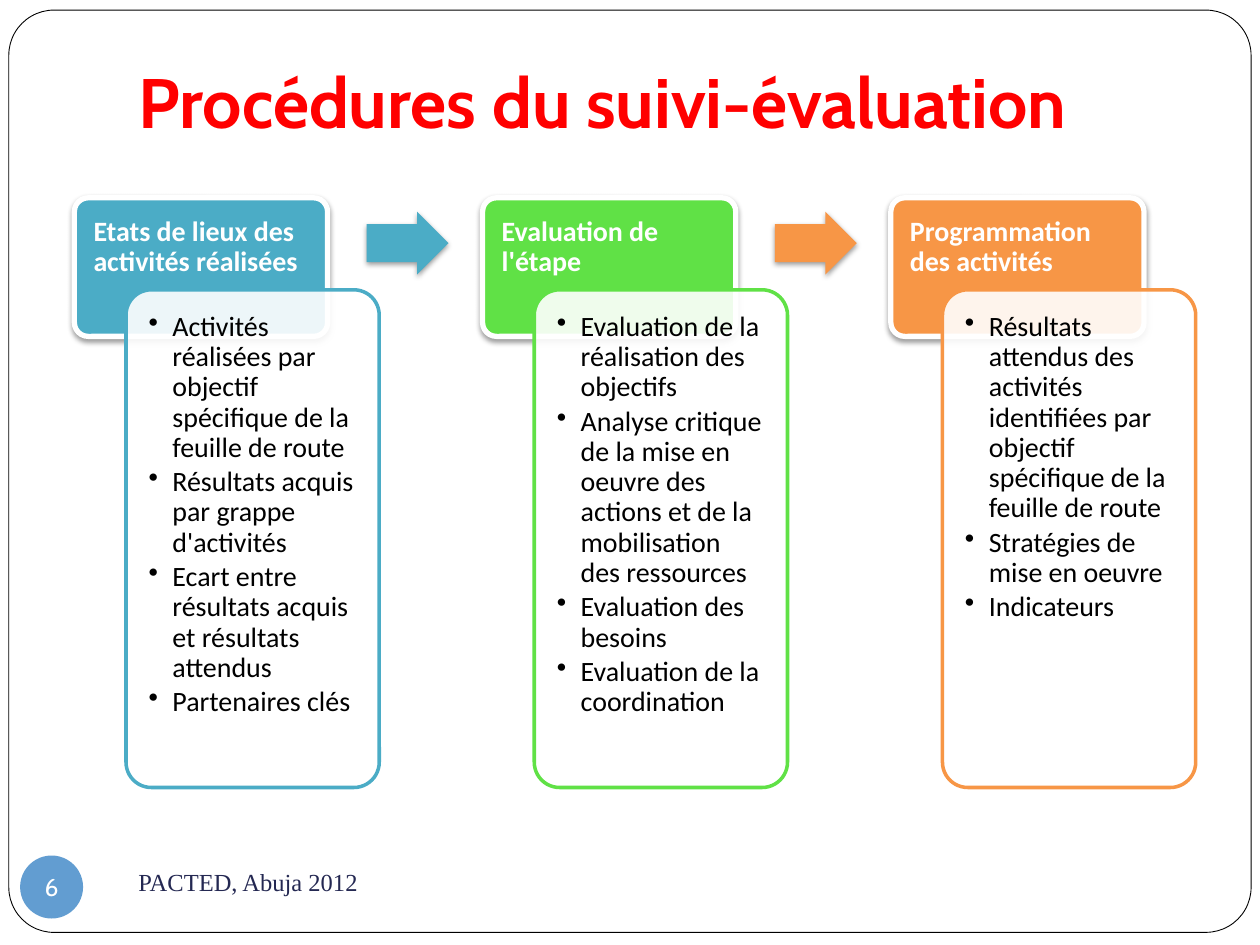
from lxml import etree
from pptx import Presentation, util as u
from pptx.dml.color import RGBColor
from pptx.enum import shapes, text
from pptx.oxml import ns

# Content
TITLE = "Procédures du suivi-évaluation"
FOOTER = "PACTED, Abuja 2012"
PAGE_NUMBER = "6"
STEPS = [
    {"heading": "Etats de lieux des activités réalisées",
     "color": "4BACC6", "arrow": "4BACC6",
     "points": ["Activités réalisées par objectif spécifique de la feuille de route",
                "Résultats acquis par grappe d'activités",
                "Ecart entre résultats acquis et résultats attendus",
                "Partenaires clés"]},
    {"heading": "Evaluation de l'étape",
     "color": "60E146", "arrow": "F79646",
     "points": ["Evaluation de la réalisation des objectifs",
                "Analyse critique de la mise en oeuvre des actions et de la "
                "mobilisation des ressources",
                "Evaluation des besoins",
                "Evaluation de la coordination"]},
    {"heading": "Programmation des activités",
     "color": "F79646", "arrow": None,
     "points": ["Résultats attendus des activités identifiées par objectif "
                "spécifique de la feuille de route",
                "Stratégies de mise en oeuvre",
                "Indicateurs"]},
]

# Theme: type styles and colours
THEME = {
    "title": {"name": "Cabin", "size": 40, "color": "FF0000", "bold": True},
    "footer": {"name": "Times New Roman", "size": 14, "color": "242852"},
    "number": {"name": "Cabin", "size": 14, "color": "FFFFFF"},
    "heading": {"name": "Calibri", "size": 16, "color": "FFFFFF", "bold": True},
    "point": {"name": "Calibri", "size": 16, "color": "000000"},
    "paper": "FFFFFF", "frame": "000000", "badge": "629DD1", "shadow": "000000",
}

# Layout in inches
STEP_LEFT, STEP_PITCH, STEP_WIDTH = 0.59, 3.24, 2.01
HEADER_TOP, HEADER_HEIGHT = 1.57, 1.1
CARD_OFFSET, CARD_TOP, CARD_HEIGHT = 0.41, 2.3, 3.95
ARROW_OFFSET, ARROW_TOP, ARROW_WIDTH, ARROW_HEIGHT = 2.32, 1.68, 0.65, 0.5
INSET, HANG = 0.12, 0.19

SHAPE = shapes.MSO_SHAPE
ANCHOR = text.MSO_ANCHOR


def add_shadow(shape):
    effects = shape._element.spPr.find(ns.qn("a:effectLst"))
    outer = etree.SubElement(effects, ns.qn("a:outerShdw"), blurRad=str(u.Pt(3.1)),
                             dist=str(u.Pt(1.6)), dir="5400000", rotWithShape="0")
    color = etree.SubElement(outer, ns.qn("a:srgbClr"), val=THEME["shadow"])
    etree.SubElement(color, ns.qn("a:alpha"), val="38000")


def add_shape(page, kind, at, fill, line=None, adjust=(), shadow=False, opacity=None):
    shape = page.shapes.add_shape(kind, *map(u.Inches, at))
    shape.shadow.inherit = False
    for index, value in enumerate(adjust):
        shape.adjustments[index] = value
    shape.fill.solid()
    shape.fill.fore_color.rgb = RGBColor.from_string(fill)
    if opacity:
        color = shape._element.spPr.find(ns.qn("a:solidFill"))[0]
        etree.SubElement(color, ns.qn("a:alpha"), val=str(opacity * 1000))
    if line:
        shape.line.color.rgb = RGBColor.from_string(line[0])
        shape.line.width = u.Pt(line[1])
    else:
        shape.line.fill.background()
    if shadow:
        add_shadow(shape)
    return shape


def write(box, lines, style, insets, anchor, wrap=True, bullet=False, **para_format):
    frame = box.text_frame
    frame.word_wrap, frame.vertical_anchor = wrap, anchor
    for side, value in zip(("left", "top", "right", "bottom"), insets):
        setattr(frame, "margin_" + side, u.Inches(value))
    look = THEME[style]
    for index, line in enumerate(lines):
        para = frame.paragraphs[0] if index == 0 else frame.add_paragraph()
        for name, value in {"alignment": text.PP_ALIGN.LEFT, **para_format}.items():
            setattr(para, name, value)
        if bullet:
            props = para._p.get_or_add_pPr()
            props.set("marL", str(u.Inches(HANG)))
            props.set("indent", str(-u.Inches(HANG)))
            etree.SubElement(props, ns.qn("a:buChar"), char="•")
        span = para.add_run()
        span.text = line
        font = {"name": look["name"], "size": u.Pt(look["size"]),
                "bold": look.get("bold", False)}
        for name, value in font.items():
            setattr(span.font, name, value)
        span.font.color.rgb = RGBColor.from_string(look["color"])


def add_step(page, left, step):
    # Heading block
    header = add_shape(page, SHAPE.ROUNDED_RECTANGLE,
                       (left, HEADER_TOP, STEP_WIDTH, HEADER_HEIGHT), step["color"],
                       line=(THEME["paper"], 3), adjust=[0.1], shadow=True)
    write(header, [step["heading"]], "heading", (INSET, INSET, INSET, 0.07),
          ANCHOR.TOP, line_spacing=0.9)
    # Card with bullet points
    card = add_shape(page, SHAPE.ROUNDED_RECTANGLE,
                     (left + CARD_OFFSET, CARD_TOP, STEP_WIDTH, CARD_HEIGHT),
                     THEME["paper"], line=(step["color"], 2), adjust=[0.1], opacity=90)
    write(card, step["points"], "point", [INSET] * 4, ANCHOR.TOP, bullet=True,
          level=1, line_spacing=0.9, space_after=u.Pt(2.4))
    # Arrow to the next step
    if step["arrow"]:
        add_shape(page, SHAPE.RIGHT_ARROW,
                  (left + ARROW_OFFSET, ARROW_TOP, ARROW_WIDTH, ARROW_HEIGHT),
                  step["arrow"], adjust=[0.6, 0.5], shadow=True)


def main():
    deck = Presentation()
    deck.slide_width, deck.slide_height = u.Inches(10), u.Inches(7.5)
    page = deck.slides.add_slide(deck.slide_layouts[6])

    # Page frame
    add_shape(page, SHAPE.ROUNDED_RECTANGLE, (0.07, 0.08, 9.86, 7.32), THEME["paper"],
              line=(THEME["frame"], 0.5), adjust=[0.049])

    # Title and footer
    title = page.shapes.add_textbox(*map(u.Inches, (1, 0.3, 8.5, 0.93)))
    write(title, [TITLE], "title", (0.1, 0.05, 0.1, 0.1), ANCHOR.BOTTOM)
    footer = page.shapes.add_textbox(*map(u.Inches, (1, 6.75, 4.33, 0.5)))
    write(footer, [FOOTER], "footer", (0.1, 0.05, 0.1, 0.05), ANCHOR.MIDDLE)

    # Page number badge
    badge = add_shape(page, SHAPE.OVAL, (0.16, 6.79, 0.5, 0.5), THEME["badge"])
    write(badge, [PAGE_NUMBER], "number", [0] * 4, ANCHOR.MIDDLE, wrap=False,
          alignment=text.PP_ALIGN.CENTER)

    # Process steps
    for index, step in enumerate(STEPS):
        add_step(page, STEP_LEFT + index * STEP_PITCH, step)

    deck.save("out.pptx")


if __name__ == "__main__":
    main()
